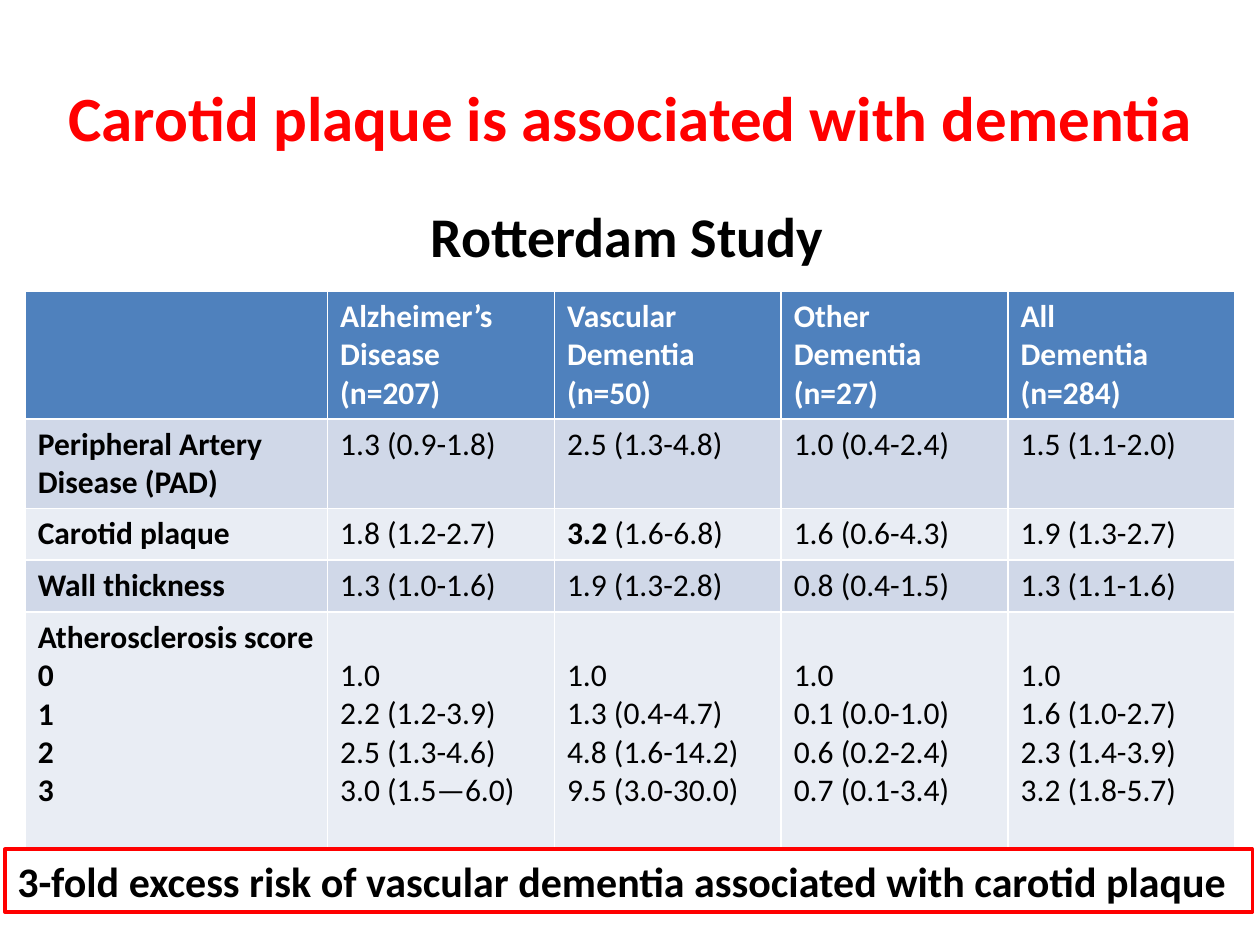
from dataclasses import dataclass

import pptx
import pptx.dml.color
import pptx.enum.text
import pptx.util

RGBColor = pptx.dml.color.RGBColor
PP_ALIGN = pptx.enum.text.PP_ALIGN
MSO_ANCHOR = pptx.enum.text.MSO_ANCHOR

RED = RGBColor(0xFF, 0x00, 0x00)
BLACK = RGBColor(0x00, 0x00, 0x00)
WHITE = RGBColor(0xFF, 0xFF, 0xFF)
HEADER_BLUE = RGBColor(0x4F, 0x81, 0xBD)
BANDS = (RGBColor(0xD0, 0xD8, 0xE8), RGBColor(0xE9, 0xED, 0xF4))

FONT = "Calibri"
GRID_COLS, GRID_ROWS = 100, 75
UNIT = pptx.util.Inches(10) / GRID_COLS
COLUMN_WIDTHS = (24, 18, 18, 18, 18)
CELL_MARGIN = 0.5
TEXT_LINE = 3.05  # height of one 18 pt line


@dataclass(frozen=True)
class Area:
    """A rectangle in grid columns and rows."""
    left: float
    top: float
    width: float
    height: float

    def emu(self) -> tuple:
        return tuple(units(v) for v in (self.left, self.top, self.width, self.height))


@dataclass(frozen=True)
class Look:
    size: int
    color: RGBColor = BLACK
    bold: bool = True


@dataclass(frozen=True)
class Row:
    label: str
    values: tuple
    height: float
    lines_above: int = 0  # lines by which the values start below the label


HEADER = Row("", ("Alzheimer’s Disease\n(n=207)", "Vascular Dementia\n(n=50)",
                  "Other Dementia\n(n=27)", "All\nDementia\n(n=284)"), 10.1)
BODY = (
    Row("Peripheral Artery Disease (PAD)",
        ("1.3 (0.9-1.8)", "2.5 (1.3-4.8)", "1.0 (0.4-2.4)", "1.5 (1.1-2.0)"), 7.1),
    Row("Carotid plaque",
        ("1.8 (1.2-2.7)", "3.2 (1.6-6.8)", "1.6 (0.6-4.3)", "1.9 (1.3-2.7)"), 4.1),
    Row("Wall thickness",
        ("1.3 (1.0-1.6)", "1.9 (1.3-2.8)", "0.8 (0.4-1.5)", "1.3 (1.1-1.6)"), 4.1),
    Row("Atherosclerosis score\n0\n1\n2\n3",
        ("1.0\n2.2 (1.2-3.9)\n2.5 (1.3-4.6)\n3.0 (1.5—6.0)",
         "1.0\n1.3 (0.4-4.7)\n4.8 (1.6-14.2)\n9.5 (3.0-30.0)",
         "1.0\n0.1 (0.0-1.0)\n0.6 (0.2-2.4)\n0.7 (0.1-3.4)",
         "1.0\n1.6 (1.0-2.7)\n2.3 (1.4-3.9)\n3.2 (1.8-5.7)"), 18.7, lines_above=1),
)
KEY_ROW, KEY_COLUMN, KEY_RATIO = 2, 2, "3.2"

HEADER_LOOK = Look(18, WHITE)
LABEL_LOOK = Look(18)
VALUE_LOOK = Look(18, bold=False)


def units(value: float) -> int:
    return int(value * UNIT)


def format_run(r, look: Look) -> None:
    r.font.name = FONT
    r.font.size = pptx.util.Pt(look.size)
    r.font.bold = look.bold
    r.font.color.rgb = look.color


def write(tf, text: str, look: Look) -> None:
    tf.text = text
    for p in tf.paragraphs:
        for r in p.runs:
            format_run(r, look)


def place_title(s, text: str, area: Area, look: Look) -> None:
    title = s.shapes.title
    title.left, title.top, title.width, title.height = area.emu()
    write(title.text_frame, text, look)
    title.text_frame.vertical_anchor = MSO_ANCHOR.MIDDLE
    title.text_frame.paragraphs[0].alignment = PP_ALIGN.CENTER


def add_line_of_text(s, text: str, area: Area, look: Look):
    sp = s.shapes.add_textbox(*area.emu())
    sp.text_frame.word_wrap = False
    sp.text_frame.auto_size = pptx.enum.text.MSO_AUTO_SIZE.SHAPE_TO_FIT_TEXT
    write(sp.text_frame, text, look)
    return sp


def fill_cell(cell, text: str, look: Look, fill: RGBColor) -> None:
    cell.fill.solid()
    cell.fill.fore_color.rgb = fill
    write(cell.text_frame, text, look)


def emphasise_start(p, start: str) -> None:
    """Split the paragraph's only run and make its start bold."""
    r = p.runs[0]
    rest = p.add_run()
    rest.text = r.text.removeprefix(start)
    format_run(rest, VALUE_LOOK)
    r.text = start
    r.font.bold = True


def add_risk_table(s, area: Area) -> None:
    rows = (HEADER, *BODY)
    table = s.shapes.add_table(len(rows), len(COLUMN_WIDTHS), *area.emu()).table
    for column, width in zip(table.columns, COLUMN_WIDTHS):
        column.width = units(width)
    for i, row in enumerate(rows):
        table.rows[i].height = units(row.height)
        fill = BANDS[(i - 1) % 2] if i else HEADER_BLUE
        value_look = VALUE_LOOK if i else HEADER_LOOK
        fill_cell(table.cell(i, 0), row.label, LABEL_LOOK, fill)
        for j, value in enumerate(row.values, start=1):
            cell = table.cell(i, j)
            fill_cell(cell, value, value_look, fill)
            cell.margin_top = units(CELL_MARGIN + row.lines_above * TEXT_LINE)
    key_cell = table.cell(KEY_ROW, KEY_COLUMN)
    emphasise_start(key_cell.text_frame.paragraphs[0], KEY_RATIO)


def main() -> None:
    prs = pptx.Presentation()
    prs.slide_width, prs.slide_height = units(GRID_COLS), units(GRID_ROWS)
    s = prs.slides.add_slide(prs.slide_layouts.get_by_name("Title Only"))

    place_title(s, "Carotid plaque is associated with dementia",
                Area(4.3, 3, 91.5, 12.5), Look(36, RED))
    table_height = sum(row.height for row in (HEADER, *BODY))
    add_risk_table(s, Area(2, 23.1, sum(COLUMN_WIDTHS), table_height))
    add_line_of_text(s, "Rotterdam Study", Area(33.2, 15.5, 33.6, 6.4), Look(32))
    conclusion = add_line_of_text(
        s, "3-fold excess risk of vascular dementia associated with carotid plaque",
        Area(0.4, 67.4, 99, 5), Look(24))
    conclusion.line.color.rgb = RED
    conclusion.line.width = pptx.util.Pt(2)

    prs.save("out.pptx")


if __name__ == "__main__":
    main()
